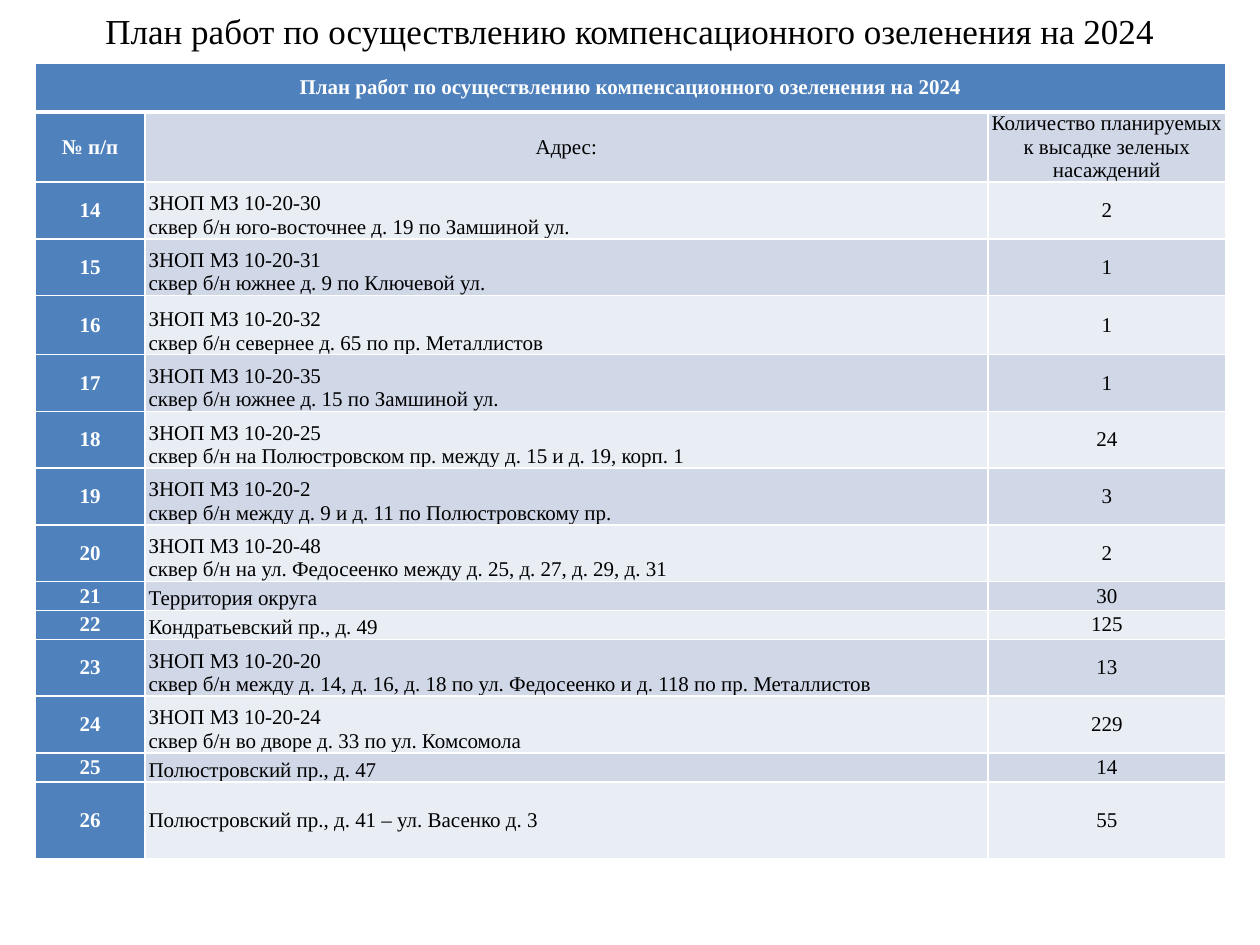
from lxml.etree import SubElement
from pptx import Presentation
from pptx.dml.color import RGBColor
from pptx.enum.text import MSO_ANCHOR, PP_ALIGN
from pptx.oxml.ns import qn
from pptx.util import Inches, Pt

TITLE = "План работ по осуществлению компенсационного озеленения на 2024"
HEADINGS = ("№ п/п", "Адрес:", "Количество планируемых к высадке зеленых насаждений")
FIRST_NUMBER = 14
# Address lines, number of plants
PLANTINGS = [
    (["ЗНОП МЗ 10-20-30", "сквер б/н юго-восточнее д. 19 по Замшиной ул."], 2),
    (["ЗНОП МЗ 10-20-31", "сквер б/н южнее д. 9 по Ключевой ул."], 1),
    (["ЗНОП МЗ 10-20-32", "сквер б/н севернее д. 65 по пр. Металлистов"], 1),
    (["ЗНОП МЗ 10-20-35", "сквер б/н южнее д. 15 по Замшиной ул."], 1),
    (["ЗНОП МЗ 10-20-25", "сквер б/н на Полюстровском пр. между д. 15 и д. 19, корп. 1"], 24),
    (["ЗНОП МЗ 10-20-2", "сквер б/н между д. 9 и д. 11 по Полюстровскому пр."], 3),
    (["ЗНОП МЗ 10-20-48", "сквер б/н на ул. Федосеенко между д. 25, д. 27, д. 29, д. 31"], 2),
    (["Территория округа"], 30),
    (["Кондратьевский пр., д. 49"], 125),
    (["ЗНОП МЗ 10-20-20",
      "сквер б/н между д. 14, д. 16, д. 18 по ул. Федосеенко и д. 118 по пр. Металлистов"], 13),
    (["ЗНОП МЗ 10-20-24", "сквер б/н во дворе д. 33 по ул. Комсомола"], 229),
    (["Полюстровский пр., д. 47"], 14),
    (["Полюстровский пр., д. 41 – ул. Васенко д. 3"], 55),
]
COLUMN_WIDTHS = (0.87, 6.69, 1.89)
ROW_HEIGHTS = [0.39, 0.45] + [0.45 if len(lines) == 2 else 0.23 for lines, _ in PLANTINGS]
ROW_HEIGHTS[4] = 0.47
ROW_HEIGHTS[-1] = 0.61


def color(value):
    return RGBColor.from_string(value)


class SlideBuilder:
    font = "Times New Roman"
    black, white, accent = "000000", "FFFFFF", "4F81BD"
    bands = ("E9EDF4", "D0D8E8")

    def __init__(self, presentation):
        self.slide = presentation.slides.add_slide(presentation.slide_layouts[5])

    def add_lines(self, frame, lines, size, ink, bold=False, align=PP_ALIGN.CENTER):
        for index, line in enumerate(lines):
            paragraph = frame.paragraphs[0] if index == 0 else frame.add_paragraph()
            paragraph.alignment = align
            run = paragraph.add_run()
            run.text = line
            run.font.name = self.font
            run.font.size = Pt(size)
            run.font.bold = bold
            run.font.color.rgb = color(ink)

    def title(self, text):
        title = self.slide.shapes.title
        title.left, title.top = Inches(0), Inches(-0.02)
        title.width, title.height = Inches(10), Inches(0.52)
        title.text_frame.word_wrap = True
        title.text_frame.vertical_anchor = MSO_ANCHOR.MIDDLE
        self.add_lines(title.text_frame, [text], 20, self.black)

    def table(self, left, top, widths, heights):
        table = self.slide.shapes.add_table(
            len(heights), len(widths), Inches(left), Inches(top),
            Inches(sum(widths)), Inches(sum(heights))).table
        for column, width in zip(table.columns, widths):
            column.width = Inches(width)
        for row, height in zip(table.rows, heights):
            row.height = Inches(height)
        return table

    def borders(self, cell, top=1, bottom=1):
        properties = cell._tc.get_or_add_tcPr()
        for side, width in (("L", 1), ("R", 1), ("T", top), ("B", bottom)):
            line = SubElement(properties, qn(f"a:ln{side}"), w=str(Pt(width)))
            fill = SubElement(line, qn("a:solidFill"))
            SubElement(fill, qn("a:srgbClr"), val=self.white)

    def cell(self, table, row, column, lines):
        cell = table.cell(row, column)
        cell.margin_left = cell.margin_right = Inches(0.03)
        cell.margin_top = cell.margin_bottom = 0
        self.borders(cell, top=3 if row == 1 else 1, bottom=3 if row == 0 else 1)
        heading = row == 0 or column == 0
        address = row > 1 and column == 1
        last = row == len(table.rows) - 1
        cell.vertical_anchor = MSO_ANCHOR.BOTTOM if address and not last else MSO_ANCHOR.MIDDLE
        cell.fill.solid()
        cell.fill.fore_color.rgb = color(self.accent if heading else self.bands[row % 2])
        self.add_lines(cell.text_frame, lines, 12, self.white if heading else self.black,
                       heading, PP_ALIGN.LEFT if address else PP_ALIGN.CENTER)


def main():
    presentation = Presentation()
    presentation.slide_width, presentation.slide_height = Inches(10), Inches(7.5)
    builder = SlideBuilder(presentation)
    builder.title(TITLE)

    # Table frame with a heading across all columns
    table = builder.table(0.28, 0.5, COLUMN_WIDTHS, ROW_HEIGHTS)
    table.cell(0, 0).merge(table.cell(0, 2))
    for column, lines in enumerate(([TITLE], [], [])):
        builder.cell(table, 0, column, lines)

    # Column headings and numbered plantings
    rows = [[[heading] for heading in HEADINGS]]
    for number, (address, count) in enumerate(PLANTINGS, FIRST_NUMBER):
        rows.append([[str(number)], address, [str(count)]])
    for row, cells in enumerate(rows, 1):
        for column, lines in enumerate(cells):
            builder.cell(table, row, column, lines)

    presentation.save("out.pptx")


if __name__ == "__main__":
    main()
